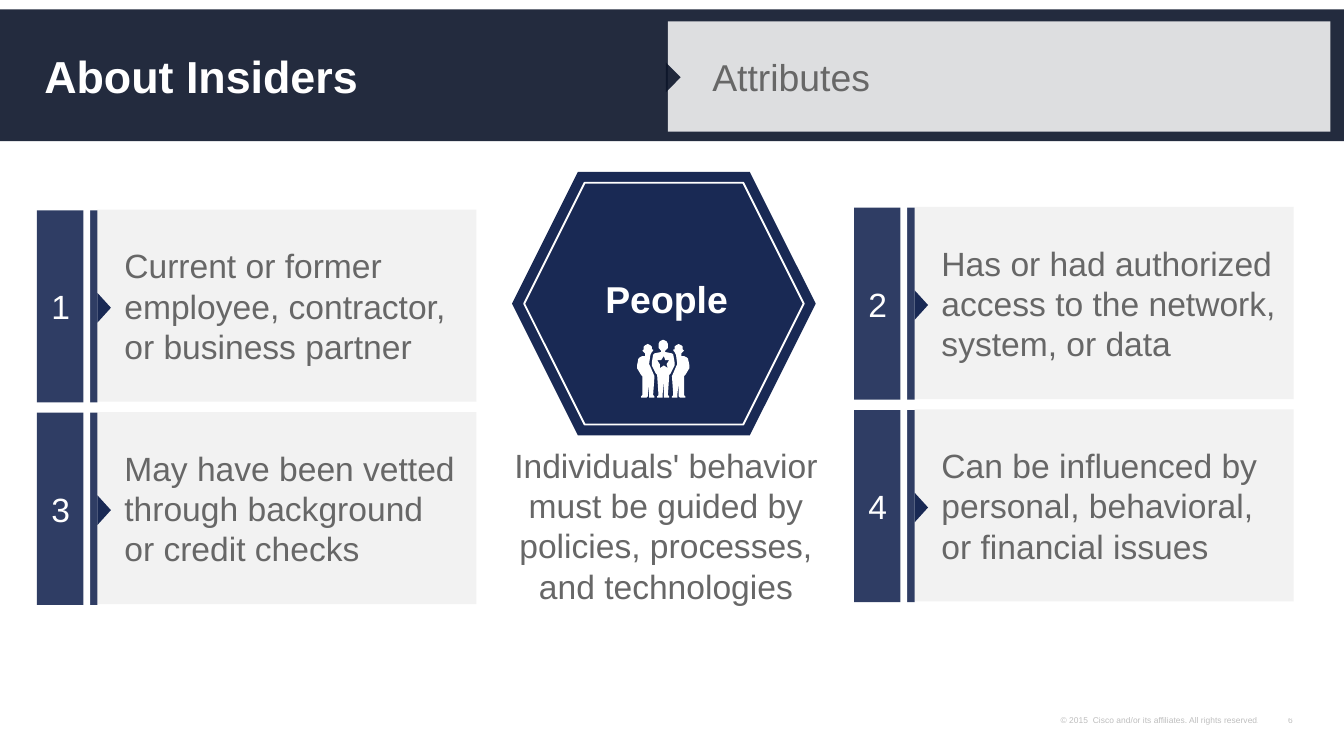
from lxml import etree
from pptx import Presentation
from pptx.dml.color import RGBColor
from pptx.enum import shapes, text
from pptx.oxml.ns import qn
from pptx.util import Emu, Pt

HUES = {"ink": "0C152A", "navy": "192954", "pale": "F2F2F2",
        "grey": "676767", "white": "FFFFFF", "black": "000000"}
KIND = shapes.MSO_SHAPE
SIDE = text.PP_ALIGN
EDGE = text.MSO_ANCHOR

deck = Presentation()
deck.slide_width, deck.slide_height = Emu(9144000), Emu(5143500)
slide = deck.slides.add_slide(deck.slide_layouts[6])
cell = deck.slide_width / 100  # a grid of 100 columns with square cells


def block(kind, left, top, wide, high, hue=None, alpha=100):
    """Add a preset shape, or a text box when kind is None; sizes in cells."""
    box = [Emu(round(n * cell)) for n in (left, top, wide, high)]
    if kind is None:
        return slide.shapes.add_textbox(*box)
    item = slide.shapes.add_shape(kind, *box)
    item.shadow.inherit = False
    item.line.fill.background()
    if hue is None:
        item.fill.background()
        return item
    item.fill.solid()
    item.fill.fore_color.rgb = RGBColor.from_string(HUES[hue])
    if alpha < 100:
        tint = next(item._element.spPr.iter(qn("a:srgbClr")))
        etree.SubElement(tint, qn("a:alpha")).set("val", str(alpha * 1000))
    return item


def write(item, lines, size, hue, side=SIDE.LEFT, edge=EDGE.MIDDLE,
          pads=(1, 0.5, 1, 0.5), bold=False, wrap=True, alpha=100):
    """Fill an item with one paragraph per line; pads in cells."""
    frame = item.text_frame
    frame.word_wrap = wrap
    frame.vertical_anchor = edge
    (frame.margin_left, frame.margin_top,
     frame.margin_right, frame.margin_bottom) = [Emu(round(n * cell)) for n in pads]
    for i, line in enumerate(lines):
        para = frame.add_paragraph() if i else frame.paragraphs[0]
        para.alignment = side
        run = para.add_run()
        run.text = line
        run.font.name, run.font.size, run.font.bold = "Arial", Pt(size), bold
        run.font.color.rgb = RGBColor.from_string(HUES[hue])
        if alpha < 100:
            tint = next(run._r.iter(qn("a:srgbClr")))
            etree.SubElement(tint, qn("a:alpha")).set("val", str(alpha * 1000))


# Footer
for left, wide, line, wrap in (
        (94.9, 1.8, "6", False),
        (65.3, 29.1, "© 2015  Cisco and/or its affiliates. All rights reserved. ", True)):
    write(block(None, left, 53, wide, 1.3), [line], 4.5, "black", SIDE.RIGHT,
          EDGE.BOTTOM, (0.5, 0.3, 0.5, 0.3), wrap=wrap, alpha=25)

# Title band
pads = (3.3, 0.7, 1.3, 0.7)
write(block(KIND.RECTANGLE, 0, 0.7, 100, 9.8, "ink", 90), ["About Insiders"],
      24, "white", pads=pads, bold=True)
write(block(KIND.RECTANGLE, 49.7, 1.6, 49.3, 8.2, "pale", 90), ["Attributes"],
      20, "grey", pads=pads)
block(KIND.ISOSCELES_TRIANGLE, 49, 5.2, 2.2, 1.1, "ink", 90).rotation = 90

# Hexagon with its inner outline
block(KIND.HEXAGON, 38.1, 12.8, 22.6, 19.6, "navy")
rim = block(KIND.HEXAGON, 39, 13.6, 20.8, 18)
rim.line.color.rgb = RGBColor.from_string(HUES["white"])
rim.line.width = Pt(1)
write(block(None, 43.2, 20.9, 12.8, 2.7), ["People"], 20, "white", SIDE.CENTER,
      pads=(0, 0, 0, 0), bold=True)

# Three people, in tenths of a cell; the right one mirrors the left one
flank = [(486, 294), (487, 280), (484, 273), (483, 271), (484, 264), (485, 262),
         (486, 261), (486, 260), (485, 260), (485, 258), (484, 257), (482, 256),
         (480, 257), (479, 258), (479, 260), (478, 261), (479, 262), (480, 263),
         (480, 265), (478, 265), (476, 266), (475, 267), (474, 272), (474, 274),
         (477, 279), (478, 280), (478, 294), (477, 295), (477, 296), (481, 296),
         (482, 295), (482, 285), (483, 294), (483, 296), (487, 296), (487, 295)]
half = [(493, 253), (491, 254), (490, 256), (490, 259), (491, 260), (492, 261),
        (492, 262), (487, 263), (486, 264), (485, 270), (485, 272), (488, 278),
        (489, 279), (490, 294), (489, 295), (489, 296), (493, 296), (493, 294),
        (493.5, 283)]
star = [(496, 271), (497, 274), (494, 272), (491, 274), (491, 271),
        (489, 268), (492, 268), (494, 265), (495, 268), (498, 268)]
twin = [(987 - x, y) for x, y in flank]
whole = half + [(987 - x, y) for x, y in half[-2::-1]]
crew = slide.shapes.add_group_shape()
for body, hole in ((flank, None), (twin, None), (whole, star)):
    pen = crew.shapes.build_freeform(*body[0], scale=cell / 10)
    pen.add_line_segments(body[1:], close=True)
    if hole:
        pen.move_to(*hole[0])
        pen.add_line_segments(hole[1:], close=True)
    man = pen.convert_to_shape()
    man.shadow.inherit = False
    man.line.fill.background()
    man.fill.solid()
    man.fill.fore_color.rgb = RGBColor.from_string(HUES["white"])

# Numbered cards, two columns by two rows
cards = [["Current or former employee, contractor, or business partner"],
         ["Has or had authorized access to the network, system, or data"],
         ["May have been vetted through background", "or credit checks"],
         ["Can be influenced by personal, behavioral, or financial issues"]]
for i, lines in enumerate(cards):
    row, col = divmod(i, 2)
    left = 7.25 + 60.8 * col
    top = 15.6 - 0.2 * col + 15.06 * row
    write(block(KIND.RECTANGLE, left, top, 28.2, 14.3, "pale", 95), lines,
          18, "grey", pads=(2, 0.5, 1, 0.5))
    block(KIND.ISOSCELES_TRIANGLE, left - 0.6, top + 6.8, 2.2, 1, "navy").rotation = 90
    write(block(KIND.RECTANGLE, left - 4.5, top + 0.05, 4.5, 14.3, "navy", 90),
          [str(i + 1)], 18, "white", SIDE.CENTER, pads=(0, 0.5, 1, 0.5))

# White strips that split the number bars
for col in range(2):
    block(KIND.RECTANGLE, 6.2 + 60.8 * col, 11.7, 0.5, 35.5, "white")

# Caption under the hexagon
write(block(None, 35.5, 32.6, 28.1, 13.1),
      ["Individuals' behavior must be guided by policies, processes, and technologies"],
      18, "grey", SIDE.CENTER, EDGE.TOP)

deck.save("out.pptx")
